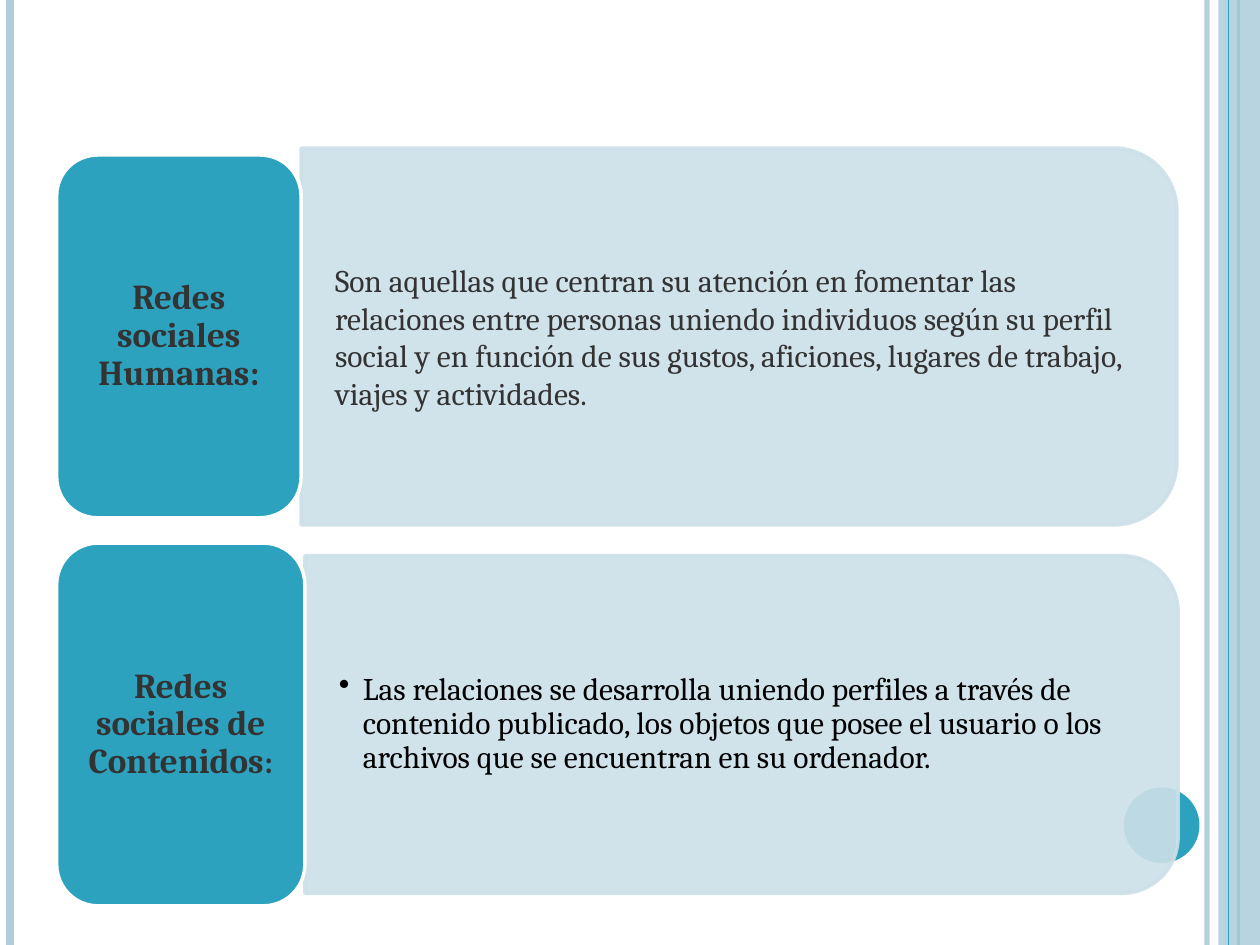
import pptx
import pptx.util
import pptx.dml.color
import pptx.enum.shapes
import pptx.enum.text
import pptx.oxml.ns
import lxml.etree

Inches = pptx.util.Inches
Pt = pptx.util.Pt
RGBColor = pptx.dml.color.RGBColor
Shape = pptx.enum.shapes.MSO_SHAPE
Align = pptx.enum.text.PP_ALIGN
qn = pptx.oxml.ns.qn

TEAL = RGBColor(0x2D, 0xA2, 0xBF)
PALE_TEAL = RGBColor(0xAD, 0xCE, 0xDC)
PANEL = RGBColor(0xCD, 0xE0, 0xE8)
GREY = RGBColor(0x33, 0x33, 0x33)
BLACK = RGBColor(0, 0, 0)
WHITE = RGBColor(0xFF, 0xFF, 0xFF)
FONT = "Cambria"


def set_opacity(element, percent):
    """Apply an opacity to the solid fill inside a fill or line element."""
    color = element.find(qn("a:solidFill")).find(qn("a:srgbClr"))
    lxml.etree.SubElement(color, qn("a:alpha"), val=str(percent * 1000))


def add_filled(page, kind, box, fill, outline=None, opacity=100):
    shape = page.shapes.add_shape(kind, *map(Inches, box))
    shape.shadow.inherit = False
    shape.fill.solid()
    shape.fill.fore_color.rgb = fill
    if outline is None:
        shape.line.fill.background()
    else:
        shape.line.color.rgb = outline
        shape.line.width = Pt(2)
    if opacity < 100:
        properties = shape.element.spPr
        set_opacity(properties, opacity)
        if outline is not None:
            set_opacity(properties.find(qn("a:ln")), opacity)
    return shape


def add_rule(page, x, width, color, opacity=100):
    """Draw a vertical line over the full height of the slide."""
    rule = page.shapes.add_connector(
        pptx.enum.shapes.MSO_CONNECTOR.STRAIGHT,
        Inches(x), 0, Inches(x), Inches(7.5))
    rule.line.color.rgb = color
    rule.line.width = Pt(width)
    properties = rule.element.spPr
    if opacity < 100:
        set_opacity(properties.find(qn("a:ln")), opacity)
    lxml.etree.SubElement(properties, qn("a:effectLst"))


def add_text(page, box, runs, color, inset, bold=False):
    """Add a vertically centred paragraph made of (text, size) runs."""
    text_box = page.shapes.add_textbox(*map(Inches, box))
    frame = text_box.text_frame
    frame.word_wrap = True
    frame.vertical_anchor = pptx.enum.text.MSO_ANCHOR.MIDDLE
    frame.margin_left = frame.margin_right = Inches(inset)
    frame.margin_top = frame.margin_bottom = Inches(inset / 2)
    para = frame.paragraphs[0]
    para.font.name = FONT
    para.font.bold = bold
    para.font.color.rgb = color
    para.font.size = Pt(runs[0][1])
    for text, size in runs:
        span = para.add_run()
        span.text = text
        if size != runs[0][1]:
            span.font.size = Pt(size)
    return para


def add_bullet(para, indent):
    properties = para._p.get_or_add_pPr()
    properties.set("marL", str(Inches(indent)))
    properties.set("indent", str(-Inches(indent)))
    bullet = lxml.etree.Element(qn("a:buChar"), char="•")
    default_font = properties.find(qn("a:defRPr"))
    if default_font is None:
        properties.append(bullet)
    else:
        default_font.addprevious(bullet)


def draw_frame(page):
    """Side rules, right band and dot."""
    add_rule(page, 9.58, 3, PALE_TEAL, 93)
    add_rule(page, 0.08, 4.5, PALE_TEAL)
    add_rule(page, 9.83, 1.5, TEAL)
    add_filled(page, Shape.RECTANGLE, (9.67, 0, 0.33, 7.5), PALE_TEAL, opacity=87)
    add_rule(page, 9.75, 0.75, TEAL)
    add_filled(page, Shape.OVAL, (8.92, 6.25, 0.6, 0.6), TEAL)


def draw_row(page, box, label_width, panel_height, label, body, body_color, bulleted):
    """A label block, with a panel to its right centred on the same axis."""
    left, top, width, height = box
    middle = top + height / 2
    panel_left = left + label_width
    panel_width = width - label_width

    # Panel: turned a quarter so that its rounded corners face right
    panel = add_filled(
        page, Shape.ROUND_2_SAME_RECTANGLE,
        (panel_left + (panel_width - panel_height) / 2, middle - panel_width / 2,
         panel_height, panel_width),
        PANEL, PANEL, 90)
    panel.rotation = 90
    text_height = panel_height * 0.9
    para = add_text(
        page, (panel_left, middle - text_height / 2, 6.8, text_height),
        [(body, 18)], body_color, 0.27)
    if bulleted:
        para.line_spacing = 0.9
        add_bullet(para, 0.19)

    # Label
    add_filled(page, Shape.ROUNDED_RECTANGLE, (left, top, label_width, height), TEAL, WHITE)
    para = add_text(
        page, (left + 0.1, top + 0.1, label_width - 0.2, height - 0.2),
        label, GREY, 0.08, bold=True)
    para.alignment = Align.CENTER
    para.line_spacing = 0.9


def main():
    deck = pptx.Presentation()
    deck.slide_width, deck.slide_height = Inches(10), Inches(7.5)
    page = deck.slides.add_slide(deck.slide_layouts[6])
    draw_frame(page)
    draw_row(
        page, (0.45, 1.23, 8.89, 2.88), 1.94, 2.99,
        [("Redes sociales Humanas:", 20)],
        "Son aquellas que centran su atención en fomentar las relaciones entre "
        "personas uniendo individuos según su perfil social y en función de sus "
        "gustos, aficiones, lugares de trabajo, viajes y actividades.",
        GREY, bulleted=False)
    draw_row(
        page, (0.45, 4.31, 8.9, 2.88), 1.97, 2.68,
        [("Redes sociales de Contenidos", 20), (":", 18)],
        "Las relaciones se desarrolla uniendo perfiles a través de contenido "
        "publicado, los objetos que posee el usuario o los archivos que se "
        "encuentran en su ordenador.",
        BLACK, bulleted=True)
    deck.save("out.pptx")


if __name__ == "__main__":
    main()
